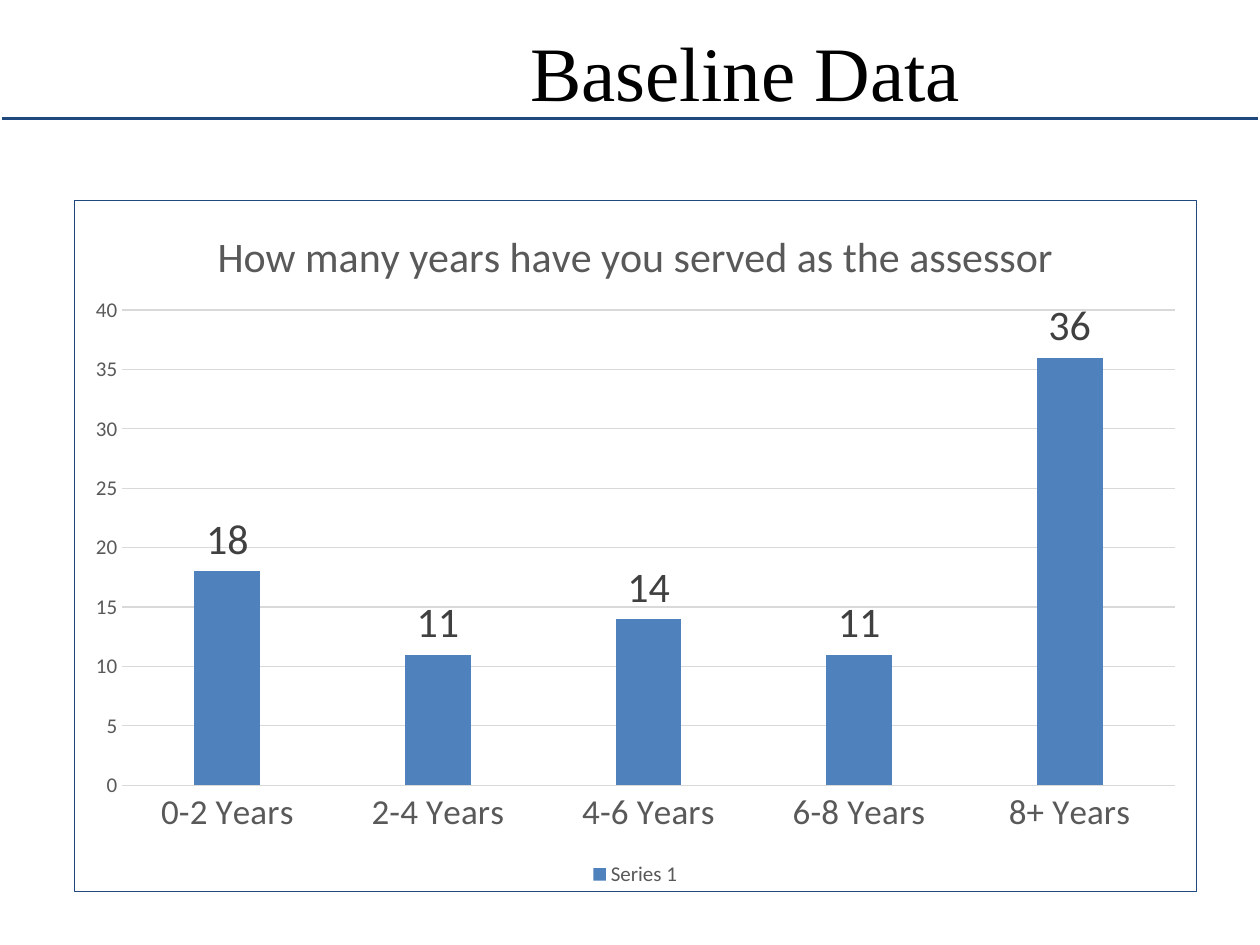
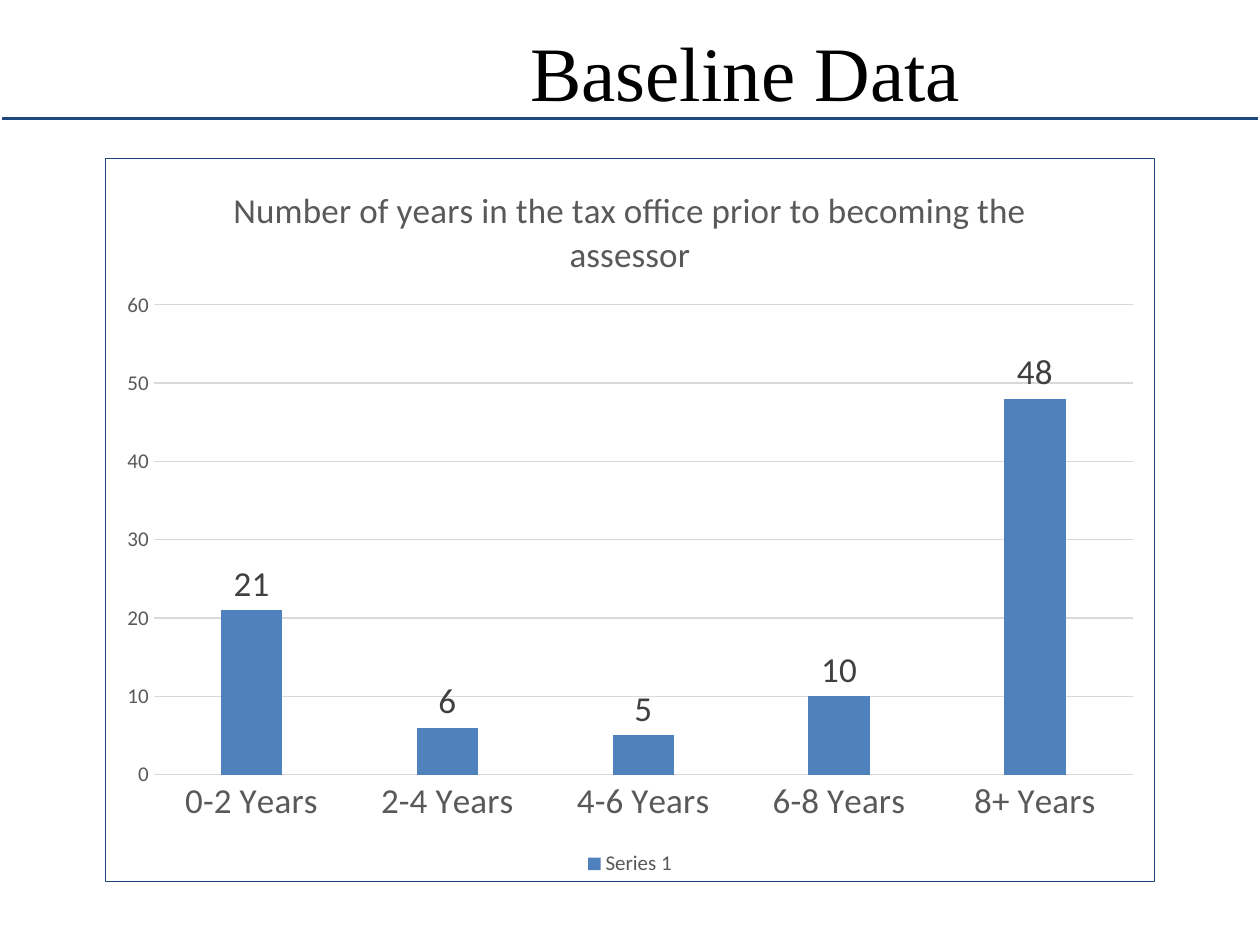
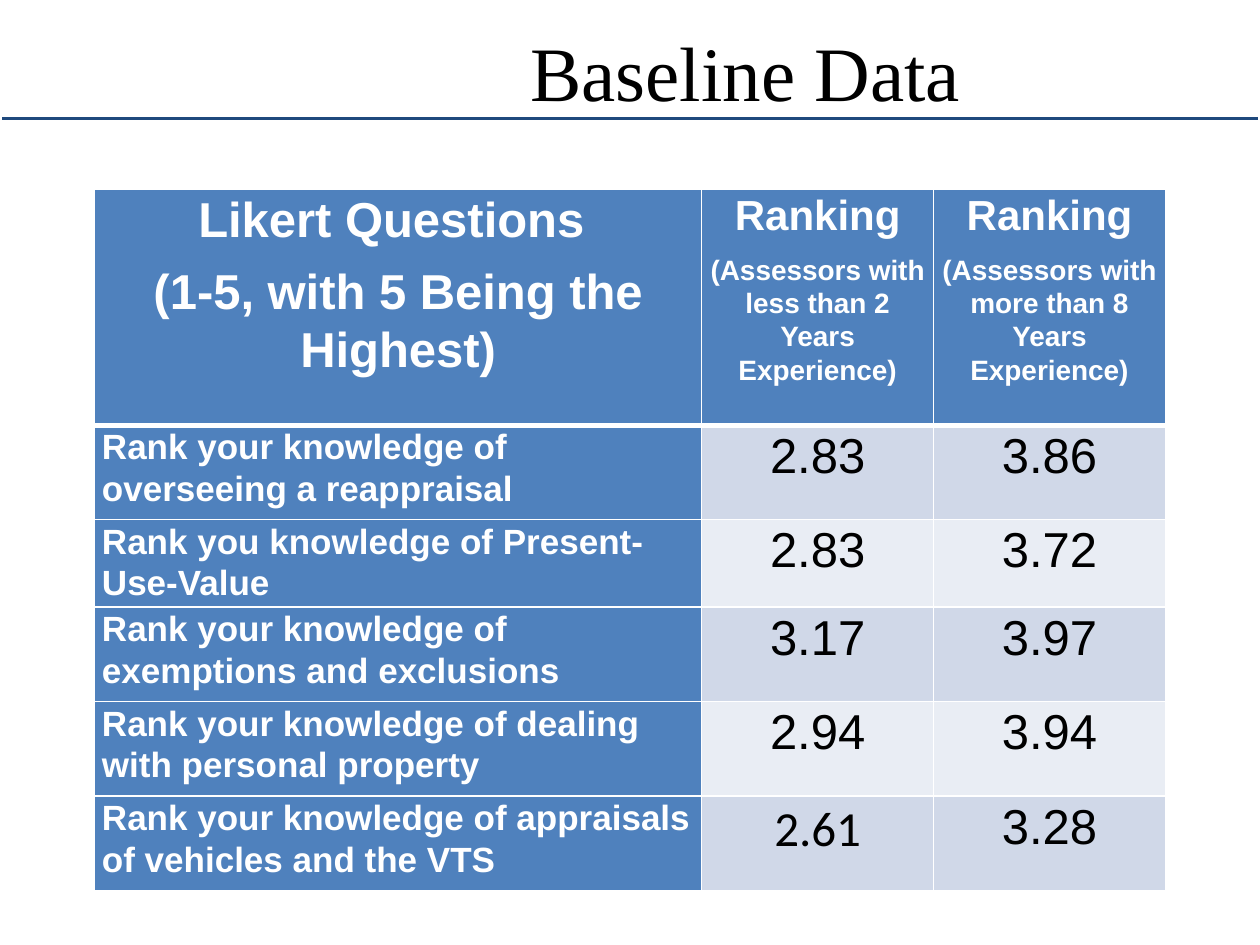
from dataclasses import dataclass

from lxml.etree import SubElement
from pptx import Presentation
from pptx.chart.data import CategoryChartData
from pptx.dml.color import RGBColor
from pptx.enum.chart import XL_CHART_TYPE as ChartType
from pptx.enum.chart import XL_LABEL_POSITION as LabelPosition
from pptx.enum.chart import XL_LEGEND_POSITION as LegendPosition
from pptx.enum.chart import XL_TICK_MARK as TickMark
from pptx.enum.shapes import MSO_SHAPE as Shape
from pptx.enum.text import MSO_ANCHOR as Anchor
from pptx.enum.text import MSO_AUTO_SIZE as AutoSize
from pptx.enum.text import PP_ALIGN as Align
from pptx.oxml import parse_xml
from pptx.oxml.ns import nsdecls, qn
from pptx.util import Pt


@dataclass(frozen=True)
class Theme:
    # Colours
    navy: str = "1F497D"
    blue: str = "4F81BD"
    band_dark: str = "D0D8E8"
    band_light: str = "E9EDF4"
    grid: str = "D9D9D9"
    gray: str = "595959"
    label: str = "404040"
    black: str = "000000"
    white: str = "FFFFFF"
    # Fonts
    title_font: str = "Times New Roman"
    chart_font: str = "Calibri"
    table_font: str = "Arial"
    # Type sizes
    title: int = 44
    large: int = 28
    heading: int = 24
    body: int = 20
    note: int = 16
    small: int = 12


THEME = Theme()
SLIDE_WIDTH, SLIDE_HEIGHT = 720, 540
YEAR_GROUPS = ["0-2 Years", "2-4 Years", "4-6 Years", "6-8 Years", "8+ Years"]

HEADERS = [
    [("Likert Questions ", THEME.large),
     ("(1-5, with 5 Being the Highest)", THEME.large)],
    [("Ranking", THEME.heading),
     ("(Assessors with less than 2 Years Experience)", THEME.note)],
    [("Ranking", THEME.heading),
     ("(Assessors with more than 8 Years Experience)", THEME.note)],
]
RANKINGS = [
    ("Rank your knowledge of overseeing a reappraisal", "2.83", "3.86"),
    ("Rank you knowledge of Present-Use-Value", "2.83", "3.72"),
    ("Rank your knowledge of exemptions and exclusions", "3.17", "3.97"),
    ("Rank your knowledge of dealing with personal property", "2.94", "3.94"),
    ("Rank your knowledge of appraisals of vehicles and the VTS", "2.61", "3.28"),
]


def rgb(color):
    return RGBColor.from_string(color)


def style_font(font, size, color, name, bold=False):
    font.size = Pt(size)
    font.name = name
    font.bold = bold
    font.color.rgb = rgb(color)


def style_line(line, color, width):
    line.color.rgb = rgb(color)
    line.width = Pt(width)


def add_run(para, text, size, color, name, bold=False):
    span = para.add_run()
    span.text = text
    style_font(span.font, size, color, name, bold)


def add_page(deck, title):
    """Title-only page with the rule under its title."""
    page = deck.slides.add_slide(deck.slide_layouts[5])
    rule = page.shapes.add_shape(Shape.RECTANGLE, 0, Pt(66), Pt(SLIDE_WIDTH), Pt(3.6))
    rule.shadow.inherit = False
    rule.fill.solid()
    rule.fill.fore_color.rgb = rgb(THEME.navy)
    style_line(rule.line, THEME.white, 2)

    box = page.shapes.title
    box.left, box.top, box.width, box.height = Pt(168), Pt(18), Pt(516), Pt(45)
    frame = box.text_frame
    frame.auto_size = AutoSize.NONE
    frame.vertical_anchor = Anchor.MIDDLE
    para = frame.paragraphs[0]
    para.alignment = Align.CENTER
    add_run(para, title, THEME.title, THEME.black, THEME.title_font)
    return page


def frame_chart(chart):
    border = parse_xml(
        f'<c:spPr {nsdecls("c", "a")}><a:noFill/><a:ln w="{Pt(0.75)}">'
        f'<a:solidFill><a:srgbClr val="{THEME.navy}"/></a:solidFill></a:ln></c:spPr>')
    chart.element.find(qn("c:chart")).addnext(border)


def place_plot(chart, width, height, top):
    """Fix the inner plot area by its margins inside the chart."""
    left, right, bottom = 27.5, 12.25, 61
    plot_area = chart.element.find(qn("c:chart")).find(qn("c:plotArea"))
    for old in plot_area.findall(qn("c:layout")):
        plot_area.remove(old)
    layout = parse_xml(f'<c:layout {nsdecls("c")}/>')
    plot_area.insert(0, layout)
    manual = SubElement(layout, qn("c:manualLayout"))
    settings = [
        ("layoutTarget", "inner"), ("xMode", "edge"), ("yMode", "edge"),
        ("x", left / width), ("y", top / height),
        ("w", (width - left - right) / width),
        ("h", (height - top - bottom) / height),
    ]
    for tag, value in settings:
        SubElement(manual, qn(f"c:{tag}")).set("val", str(value))


def style_axes(chart, maximum, step):
    category, value = chart.category_axis, chart.value_axis
    for axis, size in ((category, THEME.body), (value, THEME.small)):
        axis.major_tick_mark = axis.minor_tick_mark = TickMark.NONE
        style_font(axis.tick_labels.font, size, THEME.gray, THEME.chart_font)
    style_line(category.format.line, THEME.grid, 0.75)
    value.format.line.fill.background()
    value.minimum_scale, value.maximum_scale, value.major_unit = 0, maximum, step
    value.has_major_gridlines = True
    style_line(value.major_gridlines.format.line, THEME.grid, 0.75)


def add_column_chart(page, area, title, size, values, maximum, step, plot_top):
    data = CategoryChartData()
    data.categories = YEAR_GROUPS
    data.add_series("Series 1", values)
    chart = page.shapes.add_chart(
        ChartType.COLUMN_CLUSTERED, *(Pt(length) for length in area), data).chart
    style_font(chart.font, 10, THEME.black, THEME.chart_font)
    frame_chart(chart)
    place_plot(chart, area[2], area[3], plot_top)
    style_axes(chart, maximum, step)

    # Title and legend
    chart.has_title = True
    chart.chart_title.include_in_layout = False
    para = chart.chart_title.text_frame.paragraphs[0]
    add_run(para, title, size, THEME.gray, THEME.chart_font)
    chart.has_legend = True
    chart.legend.position = LegendPosition.BOTTOM
    chart.legend.include_in_layout = False
    style_font(chart.legend.font, THEME.small, THEME.gray, THEME.chart_font)

    # Columns and their labels
    plot = chart.plots[0]
    plot.vary_by_categories = False
    plot.gap_width, plot.overlap = 219, -27
    series = plot.series[0]
    series.format.fill.solid()
    series.format.fill.fore_color.rgb = rgb(THEME.blue)
    labels = series.data_labels
    labels.show_value = True
    labels.position = LabelPosition.OUTSIDE_END
    style_font(labels.font, size, THEME.label, THEME.chart_font)


def set_borders(cell, top, bottom):
    properties = cell._tc.get_or_add_tcPr()
    widths = {"lnL": 1, "lnR": 1, "lnT": top, "lnB": bottom}
    for index, (side, width) in enumerate(widths.items()):
        properties.insert(index, parse_xml(
            f'<a:{side} {nsdecls("a")} w="{Pt(width)}"><a:solidFill>'
            f'<a:srgbClr val="{THEME.white}"/></a:solidFill></a:{side}>'))


def fill_cell(cell, lines, fill, color, bold, align, font=THEME.table_font,
              top=1, bottom=1):
    cell.margin_left = cell.margin_right = Pt(4.3)
    cell.margin_top = cell.margin_bottom = 0
    cell.vertical_anchor = Anchor.TOP
    cell.fill.solid()
    cell.fill.fore_color.rgb = rgb(fill)
    set_borders(cell, top, bottom)
    frame = cell.text_frame
    for index, (text, size) in enumerate(lines):
        para = frame.add_paragraph() if index else frame.paragraphs[0]
        para.alignment = align
        para.line_spacing = 1.07
        para.space_after = Pt(8)
        add_run(para, text, size, color, font, bold)


def add_ranking_table(page):
    widths = [347, 132.5, 132.5]
    heights = [135, 54, 50, 54, 54, 54]
    table = page.shapes.add_table(
        len(heights), len(widths), Pt(54), Pt(108),
        Pt(sum(widths)), Pt(sum(heights))).table
    table.first_row = table.horz_banding = False
    for column, width in zip(table.columns, widths):
        column.width = Pt(width)
    for row, height in zip(table.rows, heights):
        row.height = Pt(height)

    # Header row
    for column, lines in enumerate(HEADERS):
        fill_cell(table.cell(0, column), lines, THEME.blue, THEME.white, True,
                  Align.CENTER, bottom=3)

    # Questions and their rankings
    for row, (question, *scores) in enumerate(RANKINGS, 1):
        top = 3 if row == 1 else 1
        fill_cell(table.cell(row, 0), [(question, THEME.body)], THEME.blue,
                  THEME.white, True, Align.LEFT, top=top)
        band = THEME.band_dark if row % 2 else THEME.band_light
        for column, score in enumerate(scores, 1):
            font = THEME.chart_font if score == "2.61" else THEME.table_font
            fill_cell(table.cell(row, column), [(score, THEME.large)], band,
                      THEME.black, False, Align.CENTER, font, top=top)


def main():
    deck = Presentation()
    deck.slide_width, deck.slide_height = Pt(SLIDE_WIDTH), Pt(SLIDE_HEIGHT)

    # Years served
    page = add_page(deck, "Baseline Data")
    add_column_chart(page, (42, 114, 642, 396),
                     "How many years have you served as the assessor",
                     THEME.heading, [18, 11, 14, 11, 36], 40, 5, plot_top=63)

    # Years in the tax office
    page = add_page(deck, "Baseline Data")
    add_column_chart(page, (60, 90, 600, 414),
                     "Number of years in the tax office prior to becoming the assessor",
                     THEME.body, [21, 6, 5, 10, 48], 60, 10, plot_top=84)

    # Knowledge rankings
    page = add_page(deck, "Baseline Data")
    add_ranking_table(page)

    deck.save("out.pptx")


if __name__ == "__main__":
    main()
